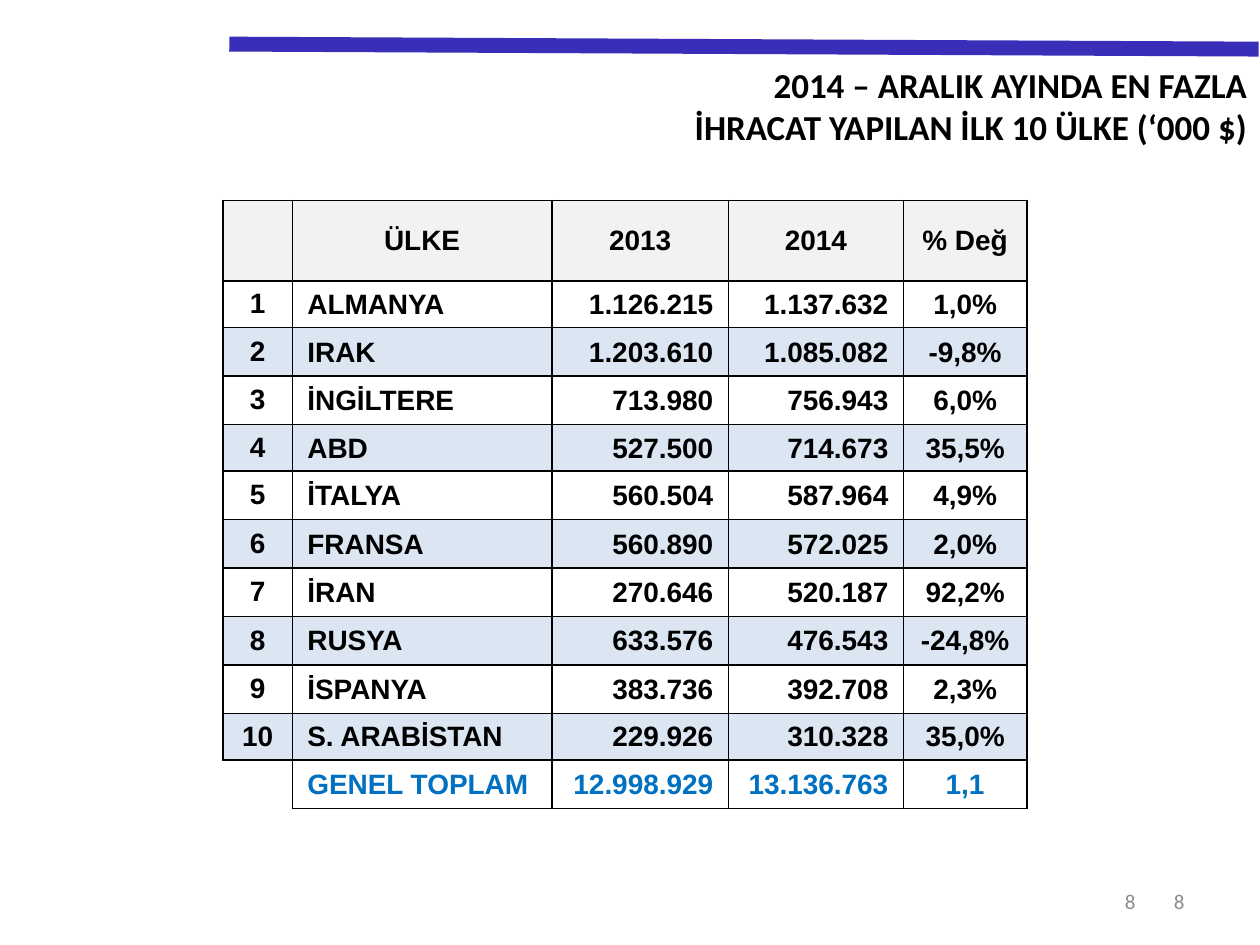
"""Build the slide that ranks the ten largest export countries of December 2014."""

from typing import NamedTuple

from lxml import etree
from pptx import Presentation
from pptx.dml.color import RGBColor
from pptx.enum.shapes import MSO_CONNECTOR
from pptx.enum.text import MSO_ANCHOR, PP_ALIGN
from pptx.oxml.ns import qn
from pptx.util import Emu, Inches, Pt

LEFT, CENTER, RIGHT = PP_ALIGN.LEFT, PP_ALIGN.CENTER, PP_ALIGN.RIGHT
TOP, MIDDLE = MSO_ANCHOR.TOP, MSO_ANCHOR.MIDDLE
STRAIGHT = MSO_CONNECTOR.STRAIGHT
TITLE_ONLY = 5

COLORS = {
    "text": "000000",
    "total": "0070C0",
    "header": "F2F2F2",
    "band": "DCE6F2",
    "bar": "382EB8",
    "number": "8C8C8C",
}


class Margins(NamedTuple):
    left: float
    top: float
    right: float
    bottom: float


class Column(NamedTuple):
    heading: str
    width: float
    align: PP_ALIGN
    margins: Margins


class Style(NamedTuple):
    font: str
    size: int
    color: str
    bold: bool


class Box(NamedTuple):
    left: float
    top: float
    width: float
    height: float


NORMAL = Margins(0.1, 0.05, 0.1, 0.05)
FIGURE = Margins(0.01, 0.01, 0.12, 0)
COLUMNS = [
    Column("", 0.55, CENTER, NORMAL),
    Column("ÜLKE", 2.06, LEFT, Margins(0.12, 0.01, 0.01, 0)),
    Column("2013", 1.4, RIGHT, FIGURE),
    Column("2014", 1.39, RIGHT, FIGURE),
    Column("% Değ", 0.98, CENTER, Margins(0.01, 0.01, 0.01, 0)),
]
COUNTRIES = [
    ("ALMANYA", "1.126.215", "1.137.632", "1,0%"),
    ("IRAK", "1.203.610", "1.085.082", "-9,8%"),
    ("İNGİLTERE", "713.980", "756.943", "6,0%"),
    ("ABD", "527.500", "714.673", "35,5%"),
    ("İTALYA", "560.504", "587.964", "4,9%"),
    ("FRANSA", "560.890", "572.025", "2,0%"),
    ("İRAN", "270.646", "520.187", "92,2%"),
    ("RUSYA", "633.576", "476.543", "-24,8%"),
    ("İSPANYA", "383.736", "392.708", "2,3%"),
    ("S. ARABİSTAN", "229.926", "310.328", "35,0%"),
]
TOTAL = ("", "GENEL TOPLAM", "12.998.929", "13.136.763", "1,1")
TITLE_LINES = ["2014 – ARALIK AYINDA EN FAZLA", "İHRACAT YAPILAN İLK 10 ÜLKE (‘000 $)"]

TITLE_BOX = Box(1.06, 0.45, 8.94, 0.77)
TABLE_BOX = Box(1.77, 1.59, sum(column.width for column in COLUMNS), 4.83)
NUMBER_BOXES = [Box(7.17, 6.95, 2.33, 0.4), Box(7.01, 6.95, 2.1, 0.4)]
HEADER_HEIGHT = 0.64
SHORT_ROWS, SHORT_HEIGHT = (1, 4, 10), 0.37

TITLE_STYLE = Style("Calibri", 20, "text", True)
CELL_STYLE = Style("Arial", 16, "text", True)
TOTAL_STYLE = CELL_STYLE._replace(color="total")
NUMBER_STYLE = Style("Calibri", 12, "number", False)


def rgb(name: str) -> RGBColor:
    return RGBColor.from_string(COLORS[name])


def lengths(box: Box) -> list[Emu]:
    return [Inches(value) for value in box]


def write(text_frame, lines: list[str], style: Style, align: PP_ALIGN) -> None:
    for index, line in enumerate(lines):
        paragraph = text_frame.add_paragraph() if index else text_frame.paragraphs[0]
        paragraph.alignment = align
        run = paragraph.add_run()
        run.text = line
        run.font.name, run.font.size = style.font, Pt(style.size)
        run.font.bold, run.font.color.rgb = style.bold, rgb(style.color)


def add_title(slide) -> None:
    title = slide.shapes.title
    title.left, title.top, title.width, title.height = lengths(TITLE_BOX)
    title.text_frame.vertical_anchor = TOP
    write(title.text_frame, TITLE_LINES, TITLE_STYLE, RIGHT)


def add_bar(slide) -> None:
    bar = slide.shapes.add_connector(
        STRAIGHT, Inches(1.82), Inches(0.35), Inches(9.99), Inches(0.39)
    )
    bar.line.color.rgb, bar.line.width = rgb("bar"), Pt(8.5)
    etree.SubElement(bar.element.spPr, qn("a:effectLst"))


def add_number(slide, box: Box) -> None:
    text_frame = slide.shapes.add_textbox(*lengths(box)).text_frame
    text_frame.word_wrap = True
    text_frame.vertical_anchor = MIDDLE
    write(text_frame, ["8"], NUMBER_STYLE, RIGHT)


def set_borders(cell, sides: str) -> None:
    properties = cell._tc.get_or_add_tcPr()
    for side in "LRTB":
        border = etree.SubElement(properties, qn(f"a:ln{side}"), w=str(Pt(1)))
        if side in sides:
            fill = etree.SubElement(border, qn("a:solidFill"))
            etree.SubElement(fill, qn("a:srgbClr"), val=COLORS["text"])
        else:
            etree.SubElement(border, qn("a:noFill"))


def fill_cell(cell, text: str, style: Style, align: PP_ALIGN, margins: Margins,
              color: str | None, sides: str) -> None:
    set_borders(cell, sides)
    if color:
        cell.fill.solid()
        cell.fill.fore_color.rgb = rgb(color)
    else:
        cell.fill.background()
    cell.vertical_anchor = MIDDLE
    (cell.margin_left, cell.margin_top,
     cell.margin_right, cell.margin_bottom) = [Inches(value) for value in margins]
    if text:
        write(cell.text_frame, [text], style, align)


def add_ranking(slide) -> None:
    headings = tuple(column.heading for column in COLUMNS)
    ranked = [(str(rank), *country) for rank, country in enumerate(COUNTRIES, 1)]
    records = [headings, *ranked, TOTAL]
    last = len(records) - 1
    table = slide.shapes.add_table(len(records), len(COLUMNS), *lengths(TABLE_BOX)).table
    table.first_row = table.horz_banding = False
    for table_column, column in zip(table.columns, COLUMNS):
        table_column.width = Inches(column.width)

    short_total = SHORT_HEIGHT * len(SHORT_ROWS)
    full_height = (TABLE_BOX.height - HEADER_HEIGHT - short_total) / (last - len(SHORT_ROWS))
    for row, record in enumerate(records):
        height = SHORT_HEIGHT if row in SHORT_ROWS else full_height
        table.rows[row].height = Inches(height if row else HEADER_HEIGHT)
        banded = row % 2 == 0 and row < last
        color = "header" if row == 0 else "band" if banded else None
        style = TOTAL_STYLE if row == last else CELL_STYLE
        for index, (text, column) in enumerate(zip(record, COLUMNS)):
            blank_total = row == last and not text
            align = column.align if row else CENTER
            margins = column.margins if row else NORMAL
            fill_cell(table.cell(row, index), text, style, align,
                      FIGURE if blank_total else margins, color,
                      "TR" if blank_total else "LRTB")


def main() -> None:
    presentation = Presentation()
    presentation.slide_width, presentation.slide_height = Inches(10), Inches(7.5)
    slide = presentation.slides.add_slide(presentation.slide_layouts[TITLE_ONLY])
    add_bar(slide)
    for box in NUMBER_BOXES:
        add_number(slide, box)
    add_title(slide)
    add_ranking(slide)
    presentation.save("out.pptx")


if __name__ == "__main__":
    main()
